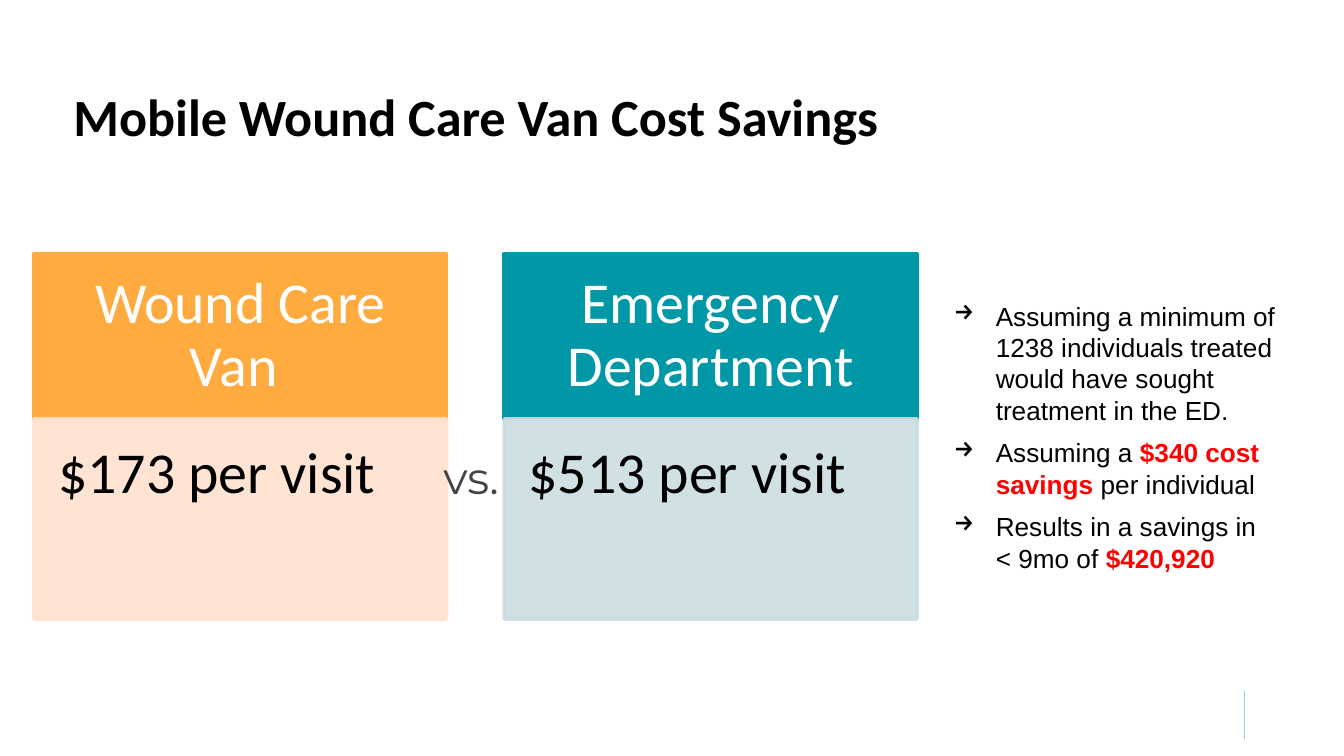
import pptx
import pptx.dml.color
import pptx.enum.shapes
import pptx.enum.text
import pptx.oxml
import pptx.oxml.ns
import pptx.util
from lxml import etree

Cm = pptx.util.Cm
Pt = pptx.util.Pt
RGBColor = pptx.dml.color.RGBColor
Anchor = pptx.enum.text.MSO_ANCHOR
Align = pptx.enum.text.PP_ALIGN
qn = pptx.oxml.ns.qn

BLACK = RGBColor(0x00, 0x00, 0x00)
WHITE = RGBColor(0xFF, 0xFF, 0xFF)
GRAY = RGBColor(0x44, 0x44, 0x44)
RED = RGBColor(0xFF, 0x00, 0x00)
ORANGE = RGBColor(0xFF, 0xAB, 0x40)
PEACH = RGBColor(0xFF, 0xE2, 0xCF)
TEAL = RGBColor(0x00, 0x97, 0xA7)
MIST = RGBColor(0xCC, 0xDD, 0xE1)
SKY = RGBColor(0x95, 0xCA, 0xFE)

DEFAULT_INSETS = (0.25, 0.13, 0.25, 0.13)
HEADER_INSETS = (0.61, 0.36, 0.61, 0.36)
BODY_INSETS = (0.46, 0.46, 0.61, 0.69)

CARDS = [
    ("Wound Care Van ", ORANGE, "$173 per visit", PEACH),
    ("Emergency Department", TEAL, "$513 per visit", MIST),
]
# Spans marked True are highlighted.
FINDINGS = [
    [("Assuming a minimum of 1238 individuals treated would have sought "
      "treatment in the ED.", False)],
    [("Assuming a ", False), ("$340 cost savings", True),
     (" per individual", False)],
    [("Results in a savings in ", False), ("\n", False),
     ("< 9mo of ", False), ("$420,920", True)],
]


class SlideBuilder:
    body_font = "Calibri"
    list_font = "Arial"
    accent_font = "Montserrat"

    def __init__(self, page):
        self.page = page

    def set_frame(self, box, insets, anchor):
        frame = box.text_frame
        frame.word_wrap = True
        frame.vertical_anchor = anchor
        (frame.margin_left, frame.margin_top,
         frame.margin_right, frame.margin_bottom) = map(Cm, insets)
        return frame

    def set_font(self, para, name, size, color, bold=False):
        font = para.font
        font.name, font.size, font.bold = name, Pt(size), bold
        font.color.rgb = color

    def text(self, place, words, name, size, color, bold=False,
             insets=DEFAULT_INSETS):
        box = self.page.shapes.add_textbox(*map(Cm, place))
        para = self.set_frame(box, insets, Anchor.TOP).paragraphs[0]
        para.text = words
        self.set_font(para, name, size, color, bold)

    def rectangle(self, place, fill, outlined=True, opacity=100):
        box = self.page.shapes.add_shape(
            pptx.enum.shapes.MSO_SHAPE.RECTANGLE, *map(Cm, place))
        box.shadow.inherit = False
        box.fill.solid()
        box.fill.fore_color.rgb = fill
        if outlined:
            box.line.color.rgb = fill
            box.line.width = Pt(2)
        else:
            box.line.fill.background()
        if opacity < 100:
            for color in box._element.spPr.iter(qn("a:srgbClr")):
                etree.SubElement(color, qn("a:alpha"), val=str(opacity * 1000))
        return box

    def panel(self, place, words, fill, color, insets, anchor, align,
              opacity=100):
        """Draw a filled rectangle with one large paragraph."""
        box = self.rectangle(place, fill, opacity=opacity)
        para = self.set_frame(box, insets, anchor).paragraphs[0]
        para.text = words
        para.alignment = align
        para.line_spacing = 0.9
        self.set_font(para, self.body_font, 31, color)

    def card(self, left, title, title_fill, price, price_fill):
        top, width, header, body = 4.8, 7.8, 3.12, 3.78
        self.panel((left, top, width, header), title, title_fill, WHITE,
                   HEADER_INSETS, Anchor.MIDDLE, Align.CENTER)
        self.panel((left, top + header, width, body), price, price_fill, BLACK,
                   BODY_INSETS, Anchor.TOP, Align.LEFT, opacity=90)

    def arrow_list(self, place, items):
        box = self.rectangle(place, WHITE, outlined=False)
        frame = self.set_frame(box, DEFAULT_INSETS, Anchor.MIDDLE)
        for index, spans in enumerate(items):
            para = frame.add_paragraph() if index else frame.paragraphs[0]
            para.alignment = Align.LEFT
            para.space_before = Pt(6)
            self.set_font(para, self.list_font, 14, BLACK)
            self.arrow_bullet(para)
            for words, highlighted in spans:
                if words == "\n":
                    para.add_line_break()
                    continue
                span = para.add_run()
                span.text = words
                if highlighted:
                    span.font.bold = True
                    span.font.color.rgb = RED

    def arrow_bullet(self, para):
        properties = para._p.get_or_add_pPr()
        indent = Cm(0.79)
        properties.set("marL", str(indent))
        properties.set("indent", str(-indent))
        bullet = pptx.oxml.parse_xml(
            f'<a:buChar {pptx.oxml.ns.nsdecls("a")} char="→"/>')
        properties.find(qn("a:defRPr")).addprevious(bullet)

    def line(self, start, end, color, width):
        line = self.page.shapes.add_connector(
            pptx.enum.shapes.MSO_CONNECTOR.STRAIGHT,
            *map(Cm, (*start, *end)))
        line.line.color.rgb = color
        line.line.width = Pt(width)
        etree.SubElement(line._element.spPr, qn("a:effectLst"))


def main():
    deck = pptx.Presentation()
    deck.slide_width, deck.slide_height = Cm(25.4), Cm(14.29)
    builder = SlideBuilder(deck.slides.add_slide(deck.slide_layouts[6]))

    builder.line((23.52, 13.06), (23.52, 13.97), SKY, 0.75)
    for index, card in enumerate(CARDS):
        builder.card(0.64 + 8.89 * index, *card)
    builder.text((8.13, 8.26, 1.68, 1.42), "vs.", builder.accent_font, 24,
                 GRAY, insets=(0.25,) * 4)
    builder.text((1.14, 1.47, 17.32, 1.45),
                 "Mobile Wound Care Van Cost Savings",
                 builder.body_font, 28, BLACK, bold=True)
    builder.arrow_list((17.78, 4.37, 7.62, 7.77), FINDINGS)
    deck.save("out.pptx")


if __name__ == "__main__":
    main()
